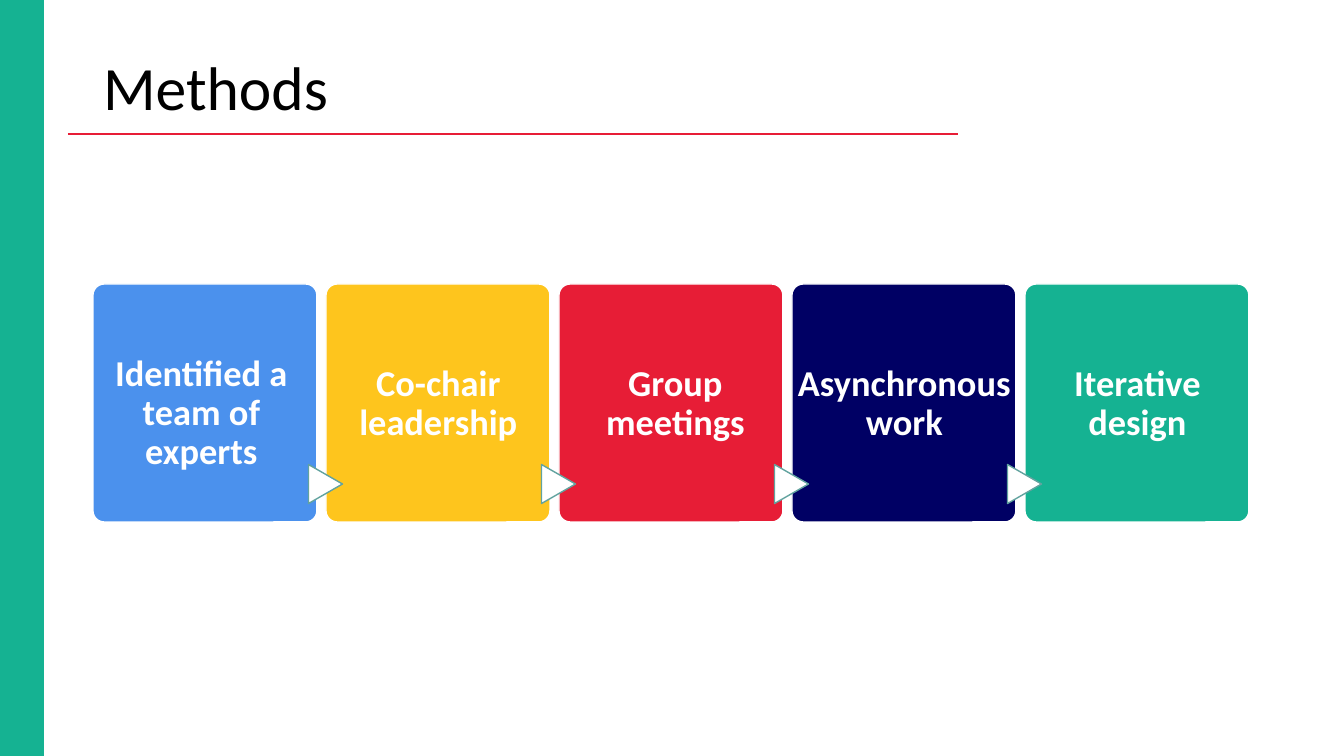
from dataclasses import dataclass

import pptx
import pptx.dml.color
import pptx.enum.shapes
import pptx.enum.text
import pptx.oxml.ns
import pptx.util
from lxml import etree

EMU_PER_PX = 914400 / 100.8
SHAPES = pptx.enum.shapes.MSO_SHAPE
ANCHOR = pptx.enum.text.MSO_ANCHOR
AUTO_SIZE = pptx.enum.text.MSO_AUTO_SIZE
ALIGN = pptx.enum.text.PP_ALIGN


@dataclass(frozen=True)
class Theme:
    font: str = "Calibri"
    title_size: int = 44
    label_size: int = 26
    black: str = "000000"
    white: str = "FFFFFF"
    green: str = "15B292"
    red: str = "E71D36"
    blue: str = "4B91ED"
    yellow: str = "FEC51D"
    navy: str = "000064"
    arrow_line: str = "62A39F"


@dataclass(frozen=True)
class Box:
    left: int
    top: int
    width: int
    height: int


@dataclass(frozen=True)
class Step:
    text: str
    fill: str
    label: Box
    side_inset: int = 10


THEME = Theme()
CARD = Box(93, 284, 224, 238)
ARROW = Box(306, 467, 39, 34)
PITCH = 233
STEPS = [
    Step("Identified a team of experts", THEME.blue, Box(98, 349, 207, 129)),
    Step("Co-chair leadership", THEME.yellow, Box(335, 359, 207, 90)),
    Step("Group meetings", THEME.red, Box(572, 359, 207, 90)),
    Step("Asynchronous work", THEME.navy, Box(792, 359, 225, 90), side_inset=0),
    Step("Iterative design", THEME.green, Box(1034, 359, 207, 90)),
]


def px(value: int) -> int:
    return pptx.util.Emu(round(value * EMU_PER_PX))


def bounds(box: Box) -> tuple[int, ...]:
    return px(box.left), px(box.top), px(box.width), px(box.height)


def column(box: Box, index: int) -> Box:
    return Box(box.left + index * PITCH, box.top, box.width, box.height)


def color(value: str) -> pptx.dml.color.RGBColor:
    return pptx.dml.color.RGBColor.from_string(value)


def apply(target, values: dict) -> None:
    for name, value in values.items():
        setattr(target, name, value)


def add_shape(slide, kind, box: Box, fill: str, line: str):
    shape = slide.shapes.add_shape(kind, *bounds(box))
    shape.shadow.inherit = False
    shape.fill.solid()
    shape.fill.fore_color.rgb = color(fill)
    shape.line.color.rgb = color(line)
    shape.line.width = pptx.util.Pt(1)
    return shape


def write_text(shape, text: str, size: int, text_color: str, alignment,
               frame_values: dict, bold: bool = False) -> None:
    frame = shape.text_frame
    frame.text = text
    apply(frame, {"word_wrap": True, "vertical_anchor": ANCHOR.MIDDLE, **frame_values})
    paragraph = frame.paragraphs[0]
    apply(paragraph, {"alignment": alignment, "line_spacing": 0.9})
    font = paragraph.runs[0].font
    apply(font, {"name": THEME.font, "size": pptx.util.Pt(size), "bold": bold})
    font.color.rgb = color(text_color)


def add_rule(slide, left: int, right: int, top: int) -> None:
    rule = slide.shapes.add_connector(
        pptx.enum.shapes.MSO_CONNECTOR.STRAIGHT, px(left), px(top), px(right), px(top))
    rule.line.color.rgb = color(THEME.red)
    rule.line.width = pptx.util.Pt(1.5)
    properties = rule.element.find(pptx.oxml.ns.qn("p:spPr"))
    etree.SubElement(properties, pptx.oxml.ns.qn("a:effectLst"))


def add_title(slide, text: str, box: Box) -> None:
    title = slide.shapes.title
    apply(title, dict(zip(("left", "top", "width", "height"), bounds(box))))
    write_text(title, text, THEME.title_size, THEME.black, ALIGN.LEFT,
               {"auto_size": AUTO_SIZE.NONE})


def add_card(slide, step: Step, index: int) -> None:
    card = add_shape(slide, SHAPES.ROUNDED_RECTANGLE, column(CARD, index),
                     step.fill, THEME.white)
    card.adjustments[0] = 0.05


def add_label(slide, step: Step) -> None:
    label = slide.shapes.add_textbox(*bounds(step.label))
    inset = px(step.side_inset)
    write_text(label, step.text, THEME.label_size, THEME.white, ALIGN.CENTER,
               {"margin_left": inset, "margin_right": inset,
                "auto_size": AUTO_SIZE.SHAPE_TO_FIT_TEXT}, bold=True)


def add_arrow(slide, index: int) -> None:
    arrow = add_shape(slide, SHAPES.FLOWCHART_EXTRACT, column(ARROW, index),
                      THEME.white, THEME.arrow_line)
    arrow.rotation = 90


def main() -> None:
    presentation = pptx.Presentation()
    apply(presentation, {"slide_width": px(1344), "slide_height": px(756)})
    slide = presentation.slides.add_slide(presentation.slide_layouts[5])

    # Side band, rule and title
    add_shape(slide, SHAPES.RECTANGLE, Box(0, 0, 43, 756), THEME.green, THEME.green)
    add_rule(slide, 68, 958, 134)
    add_title(slide, "Methods", Box(93, 47, 1159, 87))

    # Process cards with their labels
    for index, step in enumerate(STEPS):
        add_card(slide, step, index)
        add_label(slide, step)

    # Arrows between neighbouring cards
    for index in range(len(STEPS) - 1):
        add_arrow(slide, index)

    presentation.save("out.pptx")


if __name__ == "__main__":
    main()
